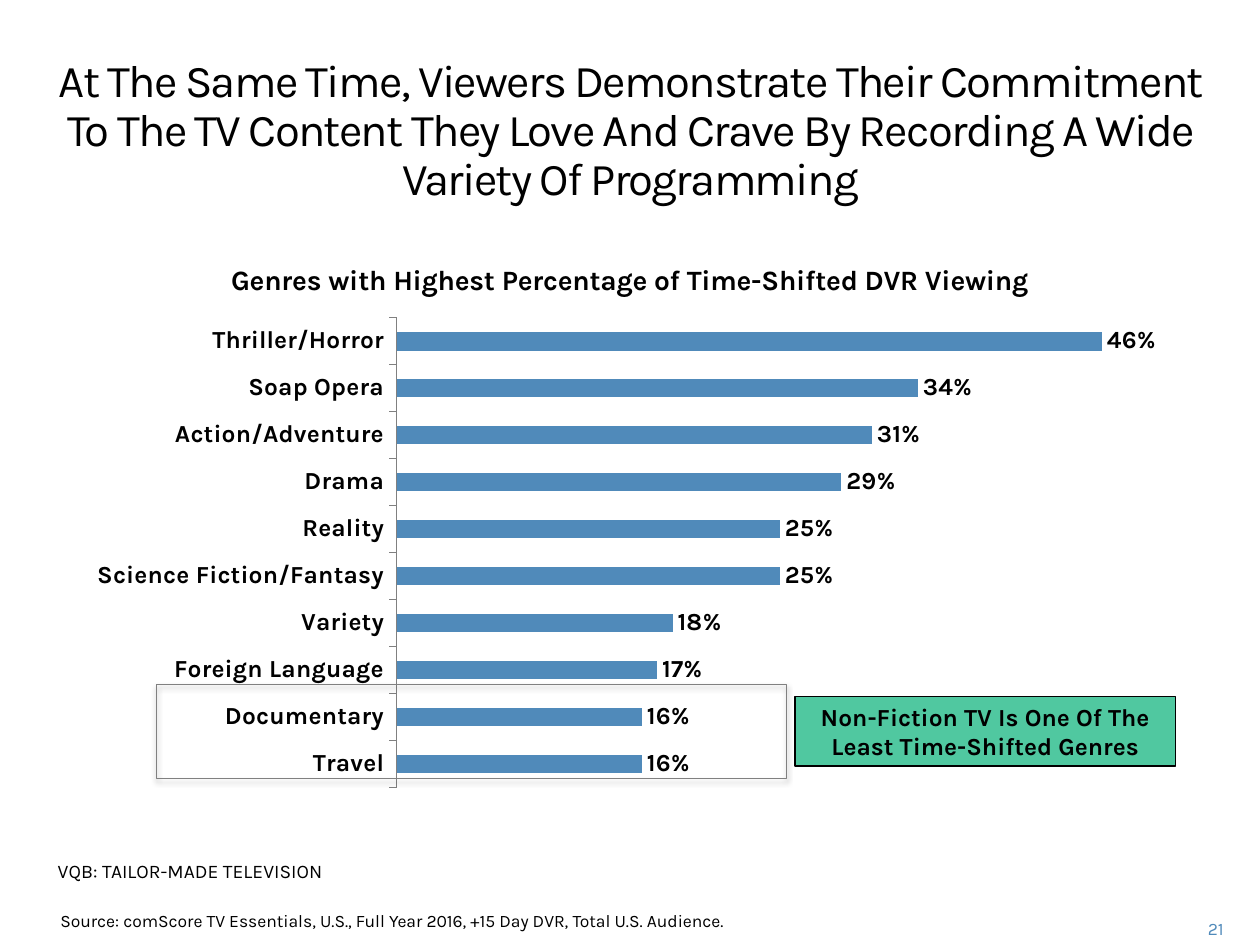
from dataclasses import dataclass

from lxml import etree
from pptx import Presentation
from pptx.chart.data import CategoryChartData
from pptx.dml.color import RGBColor
from pptx.enum.chart import XL_CHART_TYPE, XL_LABEL_POSITION, XL_TICK_MARK
from pptx.enum.shapes import MSO_SHAPE
from pptx.enum.text import MSO_ANCHOR, PP_ALIGN
from pptx.oxml import parse_xml
from pptx.oxml.ns import nsdecls, qn
from pptx.util import Inches, Pt

LEFT, CENTER, RIGHT = PP_ALIGN.LEFT, PP_ALIGN.CENTER, PP_ALIGN.RIGHT
TOP, MIDDLE = MSO_ANCHOR.TOP, MSO_ANCHOR.MIDDLE
RECTANGLE = MSO_SHAPE.RECTANGLE
FONT = "Karla"
COLORS = {"text": "000000", "blue": "508ABA", "green": "50C8A0", "gray": "808080"}
GENRES = {
    "Travel": 0.16,
    "Documentary": 0.16,
    "Foreign Language": 0.17,
    "Variety": 0.18,
    "Science Fiction/Fantasy": 0.25,
    "Reality": 0.25,
    "Drama": 0.29,
    "Action/Adventure": 0.31,
    "Soap Opera": 0.34,
    "Thriller/Horror": 0.46,
}
PLOT_LAYOUT = {"x": 0.29, "y": 0.14, "w": 0.69, "h": 0.84}


@dataclass
class Box:
    left: float
    top: float
    width: float
    height: float

    def lengths(self) -> tuple:
        return tuple(Inches(v) for v in (self.left, self.top, self.width, self.height))


@dataclass
class Label:
    box: Box
    text: str
    size: float
    align: PP_ALIGN = LEFT
    color: str = "text"
    anchor: MSO_ANCHOR = TOP
    bold: bool = False
    line_points: float | None = None
    spacing: int | None = None  # hundredths of a point


LABELS = [
    Label(Box(9.2, 7.24, 0.61, 0.25), "21", 10, RIGHT, "blue", MIDDLE),
    Label(Box(0.38, 7.17, 6.45, 0.27),
          "Source: comScore TV Essentials, U.S., Full Year 2016, +15 Day DVR, "
          "Total U.S. Audience.", 10),
    Label(Box(0.17, 0.41, 9.67, 1.07),
          "At The Same Time, Viewers Demonstrate Their Commitment To The TV Content "
          "They Love And Crave By Recording A Wide Variety Of Programming",
          26, CENTER, line_points=28, spacing=-100),
    Label(Box(0.36, 6.77, 3.08, 0.47), "VQB: TAILOR-MADE TELEVISION", 11),
]
CALLOUT = Label(Box(6.31, 5.53, 3.02, 0.55),
                "Non-Fiction TV Is One Of The Least Time-Shifted Genres",
                14, CENTER, anchor=MIDDLE, bold=True)


def rgb(name: str) -> RGBColor:
    return RGBColor.from_string(COLORS[name])


def style_font(font, size: float, bold: bool = False, color: str = "text") -> None:
    font.name = FONT
    font.size = Pt(size)
    font.bold = bold
    font.color.rgb = rgb(color)


def write_label(shape, label: Label) -> None:
    frame = shape.text_frame
    frame.word_wrap = True
    frame.vertical_anchor = label.anchor
    paragraph = frame.paragraphs[0]
    paragraph.alignment = label.align
    if label.line_points:
        paragraph.line_spacing = Pt(label.line_points)
    run = paragraph.add_run()
    run.text = label.text
    style_font(run.font, label.size, label.bold, label.color)
    if label.spacing is not None:
        run.font._element.set("spc", str(label.spacing))


def add_rectangle(slide, box: Box, line: str, fill: str | None = None):
    shape = slide.shapes.add_shape(RECTANGLE, *box.lengths())
    shape.shadow.inherit = False
    if fill:
        shape.fill.solid()
        shape.fill.fore_color.rgb = rgb(fill)
    else:
        shape.fill.background()
    shape.line.color.rgb = rgb(line)
    shape.line.width = Pt(0.75)
    return shape


def add_drop_shadow(shape) -> None:
    effects = shape._element.spPr.find(qn("a:effectLst"))
    effects.append(parse_xml(
        f'<a:outerShdw {nsdecls("a")} blurRad="{Pt(3.1)}" dist="{Pt(1.8)}" '
        'dir="5400000" rotWithShape="0"><a:srgbClr val="000000">'
        '<a:alpha val="35000"/></a:srgbClr></a:outerShdw>'))


def fix_plot_area(chart) -> None:
    """Give the inner plot area a set place within the chart."""
    plot_area = chart.element.find(f'{qn("c:chart")}/{qn("c:plotArea")}')
    for old_layout in plot_area.findall(qn("c:layout")):
        plot_area.remove(old_layout)
    layout = etree.Element(qn("c:layout"))
    manual = etree.SubElement(layout, qn("c:manualLayout"))
    settings = {"layoutTarget": "inner", "xMode": "edge", "yMode": "edge", **PLOT_LAYOUT}
    for tag, value in settings.items():
        etree.SubElement(manual, qn(f"c:{tag}")).set("val", str(value))
    plot_area.insert(0, layout)


def add_genre_chart(slide, box: Box) -> None:
    data = CategoryChartData(number_format="0%")
    data.categories = list(GENRES)
    data.add_series("Series 1", list(GENRES.values()))
    chart = slide.shapes.add_chart(
        XL_CHART_TYPE.BAR_CLUSTERED, *box.lengths(), data).chart
    style_font(chart.font, 18)
    chart.has_legend = False
    chart.has_title = True
    run = chart.chart_title.text_frame.paragraphs[0].add_run()
    run.text = "Genres with Highest Percentage of Time-Shifted DVR Viewing"
    style_font(run.font, 16, True)
    chart.chart_title.include_in_layout = False

    category_axis = chart.category_axis
    category_axis.major_tick_mark = XL_TICK_MARK.OUTSIDE
    category_axis.format.line.color.rgb = rgb("gray")
    style_font(category_axis.tick_labels.font, 14, True)
    value_axis = chart.value_axis
    value_axis.minimum_scale = 0
    value_axis.maximum_scale = 0.5
    value_axis.has_major_gridlines = False
    value_axis.visible = False

    plot = chart.plots[0]
    plot.gap_width = 150
    plot.vary_by_categories = False
    series = plot.series[0]
    series.format.fill.solid()
    series.format.fill.fore_color.rgb = rgb("blue")
    labels = series.data_labels
    labels.show_value = True
    labels.number_format = "0%"
    labels.number_format_is_linked = False
    labels.position = XL_LABEL_POSITION.OUTSIDE_END
    style_font(labels.font, 14, True)
    fix_plot_area(chart)


def main() -> None:
    presentation = Presentation()
    presentation.slide_width = Inches(10)
    presentation.slide_height = Inches(7.5)
    slide = presentation.slides.add_slide(presentation.slide_layouts[6])
    for label in LABELS:
        write_label(slide.shapes.add_textbox(*label.box.lengths()), label)
    add_genre_chart(slide, Box(0.59, 1.9, 8.82, 4.44))
    add_drop_shadow(add_rectangle(slide, Box(1.24, 5.43, 5, 0.75), "gray"))
    write_label(add_rectangle(slide, CALLOUT.box, "text", "green"), CALLOUT)
    presentation.save("out.pptx")


if __name__ == "__main__":
    main()
